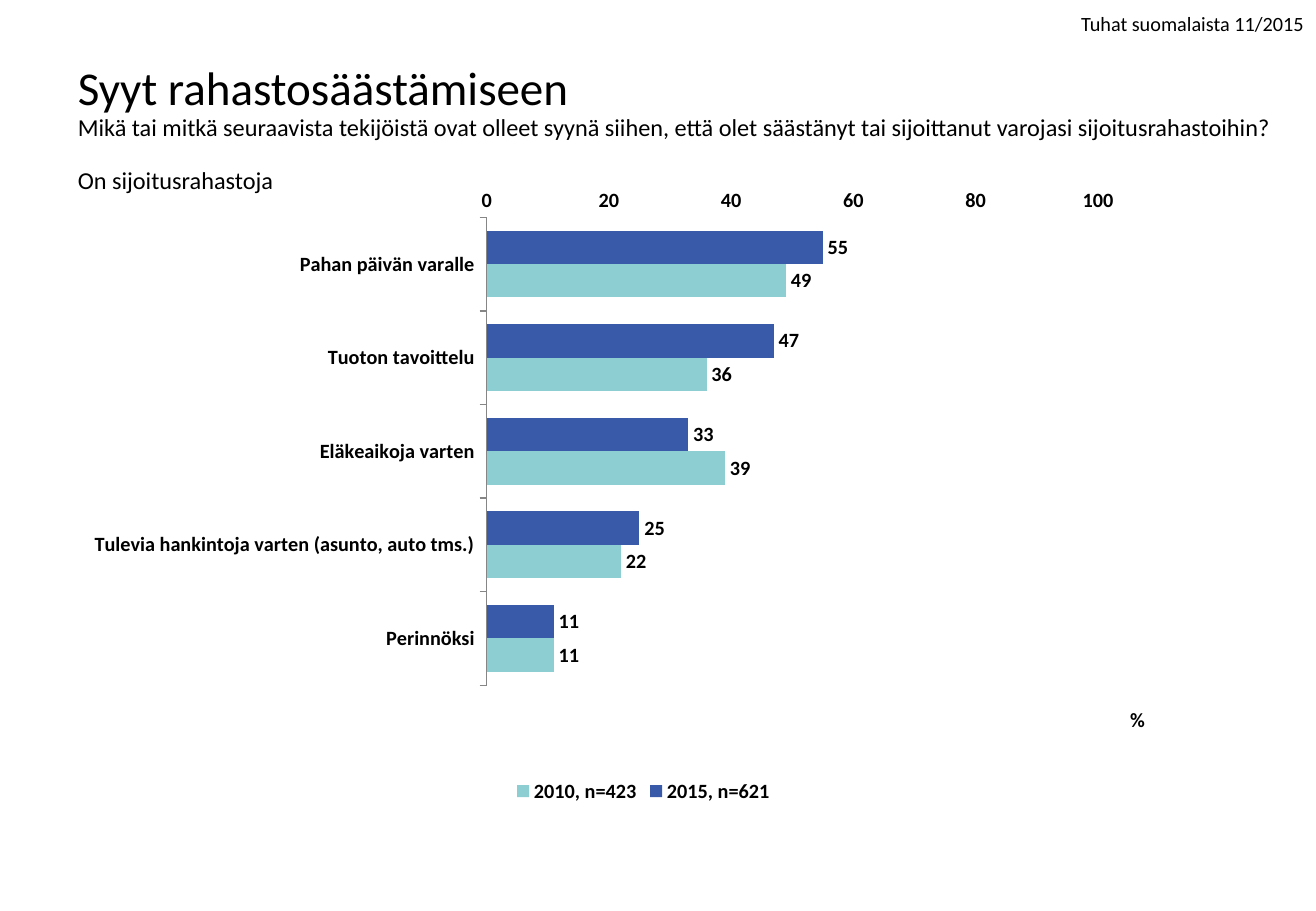
from dataclasses import dataclass

from lxml import etree
from pptx import Presentation
from pptx import util as u
from pptx.chart import data as chart_data
from pptx.dml import color
from pptx.enum import chart as kinds
from pptx.enum import text
from pptx.oxml import ns


@dataclass(frozen=True)
class Theme:
    """Colours, font and type sizes of the slide."""
    font: str = "Calibri"
    ink: str = "000000"
    axis: str = "868686"
    year_2015: str = "395AA8"
    year_2010: str = "8DCED2"
    title: float = 27.9
    question: float = 14.4
    small: float = 12


THEME = Theme()
REASONS = ["Pahan päivän varalle", "Tuoton tavoittelu", "Eläkeaikoja varten",
           "Tulevia hankintoja varten (asunto, auto tms.)", "Perinnöksi"]
SERIES = [("2015, n=621", (55, 47, 33, 25, 11), THEME.year_2015),
          ("2010, n=423", (49, 36, 39, 22, 11), THEME.year_2010)]
TITLE_LINES = [
    ("Syyt rahastosäästämiseen", THEME.title),
    ("Mikä tai mitkä seuraavista tekijöistä ovat olleet syynä siihen, että olet "
     "säästänyt tai sijoittanut varojasi sijoitusrahastoihin?", THEME.question),
    ("", THEME.question),
    ("On sijoitusrahastoja", THEME.question),
]


def apply(target, **values):
    """Set every given attribute on the target."""
    for name, value in values.items():
        setattr(target, name, value)


def style_font(font, size, bold=False):
    """Give a font the theme's face and ink at one size."""
    apply(font, name=THEME.font, size=u.Pt(size), bold=bold)
    font.color.rgb = color.RGBColor.from_string(THEME.ink)


def lay_out(parent, after, **fractions):
    """Fix a chart part at fractions of the chart, following a sibling tag."""
    for old in parent.findall(ns.qn("c:layout")):
        parent.remove(old)
    layout = etree.Element(ns.qn("c:layout"))
    manual = etree.SubElement(layout, ns.qn("c:manualLayout"))
    values = {"xMode": "edge", "yMode": "edge", **fractions}
    if "w" in fractions:
        values = {"layoutTarget": "inner", **values}
    for tag, value in values.items():
        etree.SubElement(manual, ns.qn(f"c:{tag}")).set("val", str(value))
    if after:
        parent.find(ns.qn(after)).addnext(layout)
    else:
        parent.insert(0, layout)


def add_source(page, box):
    """Write the survey name in the top right corner."""
    frame = page.shapes.add_textbox(*box).text_frame
    frame.word_wrap = False
    para = frame.paragraphs[0]
    para.alignment = text.PP_ALIGN.RIGHT
    span = para.add_run()
    span.text = "Tuhat suomalaista 11/2015"
    style_font(span.font, THEME.small)


def add_title(page, box):
    """Fill the title placeholder with the heading and the question."""
    title = page.shapes.title
    apply(title, **dict(zip(("left", "top", "width", "height"), box)))
    frame = title.text_frame
    apply(frame, word_wrap=True, auto_size=text.MSO_AUTO_SIZE.NONE,
          vertical_anchor=text.MSO_ANCHOR.BOTTOM)
    para = frame.paragraphs[0]
    apply(para, alignment=text.PP_ALIGN.LEFT, line_spacing=0.9)
    for index, (line, size) in enumerate(TITLE_LINES):
        if index:
            para.add_line_break()
            mark = etree.SubElement(para._p[-1], ns.qn("a:rPr"))
            mark.set("sz", str(round(size * 100)))
        if line:
            span = para.add_run()
            span.text = line
            style_font(span.font, size)


def format_axes(chart):
    """Set up the reason axis and the percentage axis."""
    reasons, percent = chart.category_axis, chart.value_axis
    marks, labels = kinds.XL_TICK_MARK, kinds.XL_TICK_LABEL_POSITION
    apply(reasons, reverse_order=True, major_tick_mark=marks.OUTSIDE,
          tick_label_position=labels.LOW, has_major_gridlines=False,
          crosses=kinds.XL_AXIS_CROSSES.MAXIMUM)
    reasons.format.line.color.rgb = color.RGBColor.from_string(THEME.axis)
    apply(percent, minimum_scale=0, maximum_scale=100, major_unit=20,
          has_major_gridlines=False, major_tick_mark=marks.NONE, has_title=True)
    percent.format.line.fill.background()
    para = percent.axis_title.text_frame.paragraphs[0]
    span = para.add_run()
    span.text = "%"
    style_font(span.font, THEME.small, bold=True)
    lay_out(percent.axis_title._element, "c:tx", x=0.88, y=0.73)


def add_reasons_chart(page, box):
    """Draw the bars comparing the reasons in both years."""
    values = chart_data.CategoryChartData(number_format="0")
    values.categories = REASONS
    for name, numbers, _ in SERIES:
        values.add_series(name, numbers)
    chart = page.shapes.add_chart(kinds.XL_CHART_TYPE.BAR_CLUSTERED, *box, values).chart
    apply(chart, has_title=False, has_legend=True)
    style_font(chart.font, THEME.small, bold=True)
    plot = chart.plots[0]
    apply(plot, gap_width=80, overlap=0, vary_by_categories=False)
    for series, (_, _, fill) in zip(plot.series, SERIES):
        series.format.fill.solid()
        series.format.fill.fore_color.rgb = color.RGBColor.from_string(fill)
        apply(series.data_labels, show_value=True,
              position=kinds.XL_LABEL_POSITION.OUTSIDE_END)
    format_axes(chart)
    apply(chart.legend, position=kinds.XL_LEGEND_POSITION.BOTTOM, include_in_layout=False)
    lay_out(chart.legend._element, "c:legendPos", x=0.36, y=0.83)
    plot_area = chart._chartSpace.find(".//" + ns.qn("c:plotArea"))
    lay_out(plot_area, None, x=0.34, y=0.054, w=0.516, h=0.652)


def main():
    """Build the slide and save it."""
    deck = Presentation()
    apply(deck, slide_width=u.Inches(10.83), slide_height=u.Inches(7.5))
    page = deck.slides.add_slide(deck.slide_layouts[5])
    regions = [
        (add_source, (8.77, 0.04, 2.06, 0.3)),
        (add_reasons_chart, (0.69, 1.47, 9.75, 5.91)),
        (add_title, (0.54, 0.4, 10.29, 1.25)),
    ]
    for draw, box in regions:
        draw(page, [u.Inches(length) for length in box])
    deck.save("out.pptx")


if __name__ == "__main__":
    main()
